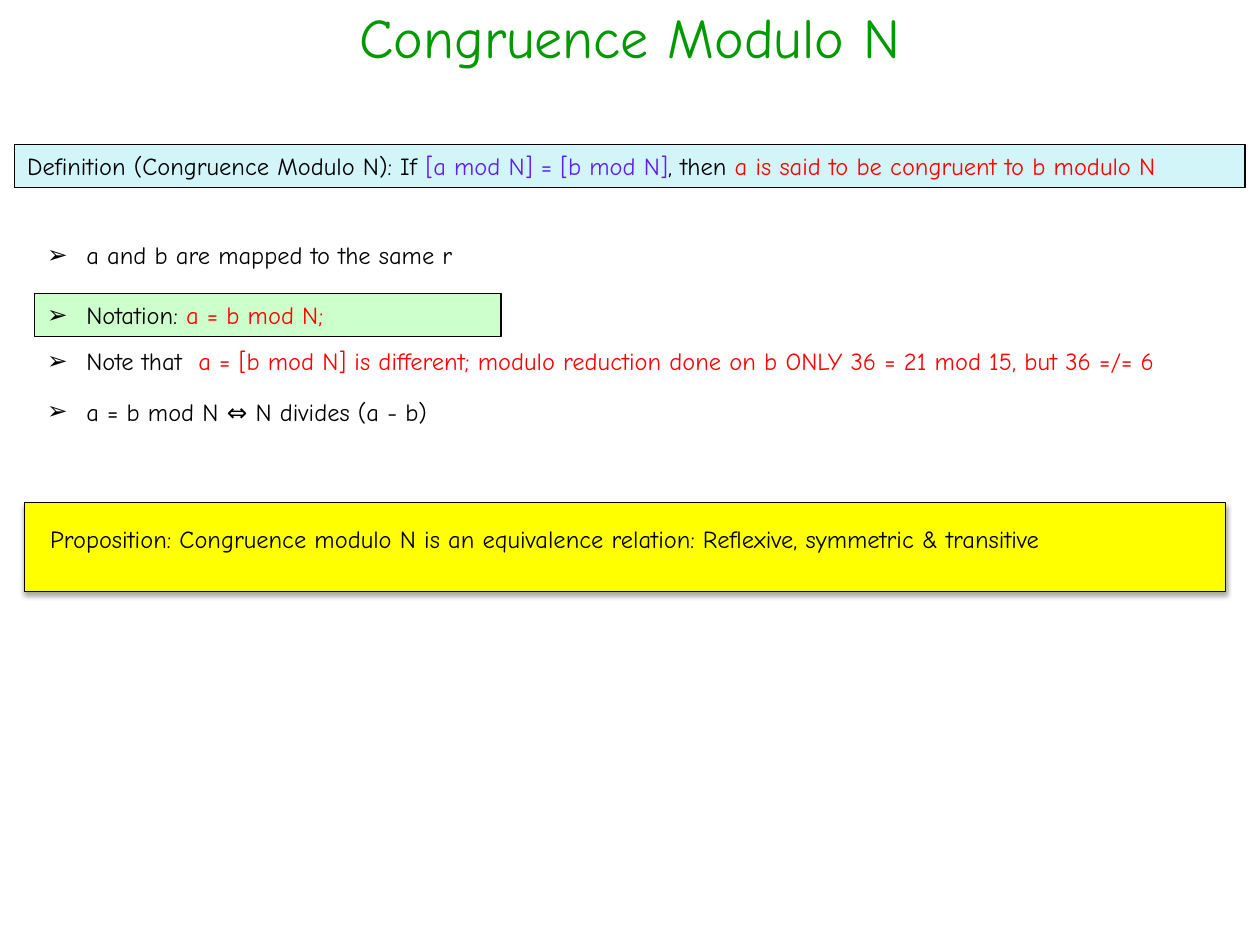
from lxml.etree import SubElement
from pptx import Presentation
from pptx.dml.color import RGBColor
from pptx.enum.shapes import MSO_SHAPE as SHAPE
from pptx.enum.text import MSO_ANCHOR as ANCHOR, PP_ALIGN as ALIGN
from pptx.oxml.ns import qn
from pptx.util import Cm, Pt

FONT = "Comic Neue"
BLACK = RGBColor(0x00, 0x00, 0x00)
RED = RGBColor(0xFF, 0x00, 0x00)
GREEN = RGBColor(0x00, 0x99, 0x00)
VIOLET = RGBColor(0x5E, 0x1E, 0xFE)
PALE_BLUE = RGBColor(0xD2, 0xF5, 0xFA)
PALE_GREEN = RGBColor(0xCC, 0xFF, 0xCC)
YELLOW = RGBColor(0xFF, 0xFF, 0x00)
LINE_H = 0.86


def add_box(shapes, left, top, width, height, fill=None):
    """Add a text box, or an outlined rectangle when a fill is given."""
    box = Cm(left), Cm(top), Cm(width), Cm(height)
    if fill is None:
        return shapes.add_textbox(*box)
    sp = shapes.add_shape(SHAPE.RECTANGLE, *box)
    sp.shadow.inherit = False
    sp.fill.solid()
    sp.fill.fore_color.rgb = fill
    sp.line.color.rgb = BLACK
    sp.line.width = Pt(0.75)
    return sp


def write(sp, runs, size=14, align=ALIGN.LEFT, bullet=False):
    """Write one paragraph of (text, colour) runs."""
    tf = sp.text_frame
    tf.word_wrap = True
    tf.vertical_anchor = ANCHOR.TOP
    p = tf.paragraphs[0]
    p.alignment = align
    if bullet:
        pPr = p._p.get_or_add_pPr()
        pPr.set("marL", str(Cm(0.79)))
        pPr.set("indent", str(-Cm(0.79)))
        SubElement(pPr, qn("a:buFont"), typeface="Arial")
        SubElement(pPr, qn("a:buChar"), char="➢")
    for text, color in runs:
        r = p.add_run()
        r.text = text
        r.font.name = FONT
        r.font.size = Pt(size)
        r.font.color.rgb = color


prs = Presentation()
prs.slide_width, prs.slide_height = Cm(25.4), Cm(19.05)
s = prs.slides.add_slide(prs.slide_layouts[6])

# Title
title = add_box(s.shapes, -0.1, -0.08, 25.6, 1.6)
write(title, [("Congruence Modulo N", GREEN)], 32, ALIGN.CENTER)

# Definition
definition = add_box(s.shapes, 0.3, 2.92, 24.8, LINE_H, PALE_BLUE)
write(definition, [
    ("Definition (Congruence Modulo N): If ", BLACK),
    ("[a mod N] = [b mod N]", VIOLET),
    (", then ", BLACK),
    ("a is said to be congruent to b modulo N", RED),
])

# Bulleted remarks: top, width, fill, runs
remarks = [
    (4.72, 21.4, None, [("a and b are mapped to the same r", BLACK)]),
    (5.92, 9.4, PALE_GREEN, [("Notation: ", BLACK), ("a = b mod N;", RED)]),
    (6.86, 24.7, None, [
        ("Note that  ", BLACK),
        ("a = [b mod N] is different; modulo reduction done on b ONLY "
         "36 = 21 mod 15, but 36 =/= 6", RED),
    ]),
    (7.87, 21.4, None, [("a = b mod N ⇔ N divides (a - b)", BLACK)]),
]
for top, width, fill, runs in remarks:
    write(add_box(s.shapes, 0.7, top, width, LINE_H, fill), runs, bullet=True)

# Proposition: shadowed panel grouped with its text
group = s.shapes.add_group_shape()
panel = add_box(group.shapes, 0.5, 10.13, 24.2, 1.8, YELLOW)
effects = panel._element.spPr.find(qn("a:effectLst"))
shadow = SubElement(effects, qn("a:outerShdw"), blurRad=str(Pt(3.1)),
                    dist=str(Pt(1.8)), dir="5400000", rotWithShape="0")
shade = SubElement(shadow, qn("a:srgbClr"), val=str(BLACK))
SubElement(shade, qn("a:alpha"), val="35000")
proposition = add_box(group.shapes, 0.76, 10.43, 23.16, LINE_H)
write(proposition, [
    ("Proposition: Congruence modulo N is an equivalence relation: "
     "Reflexive, symmetric & transitive", BLACK),
])

prs.save("out.pptx")
